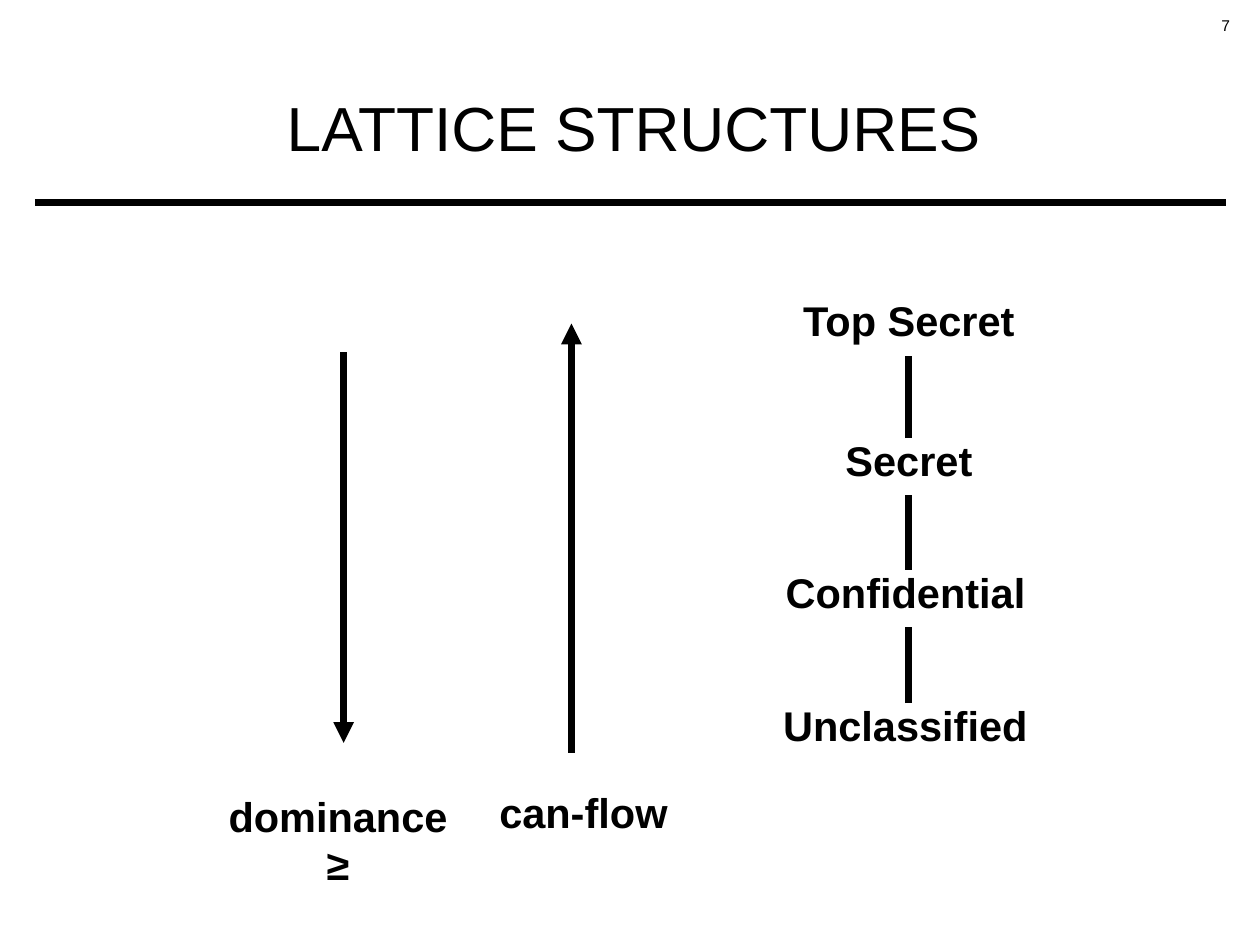
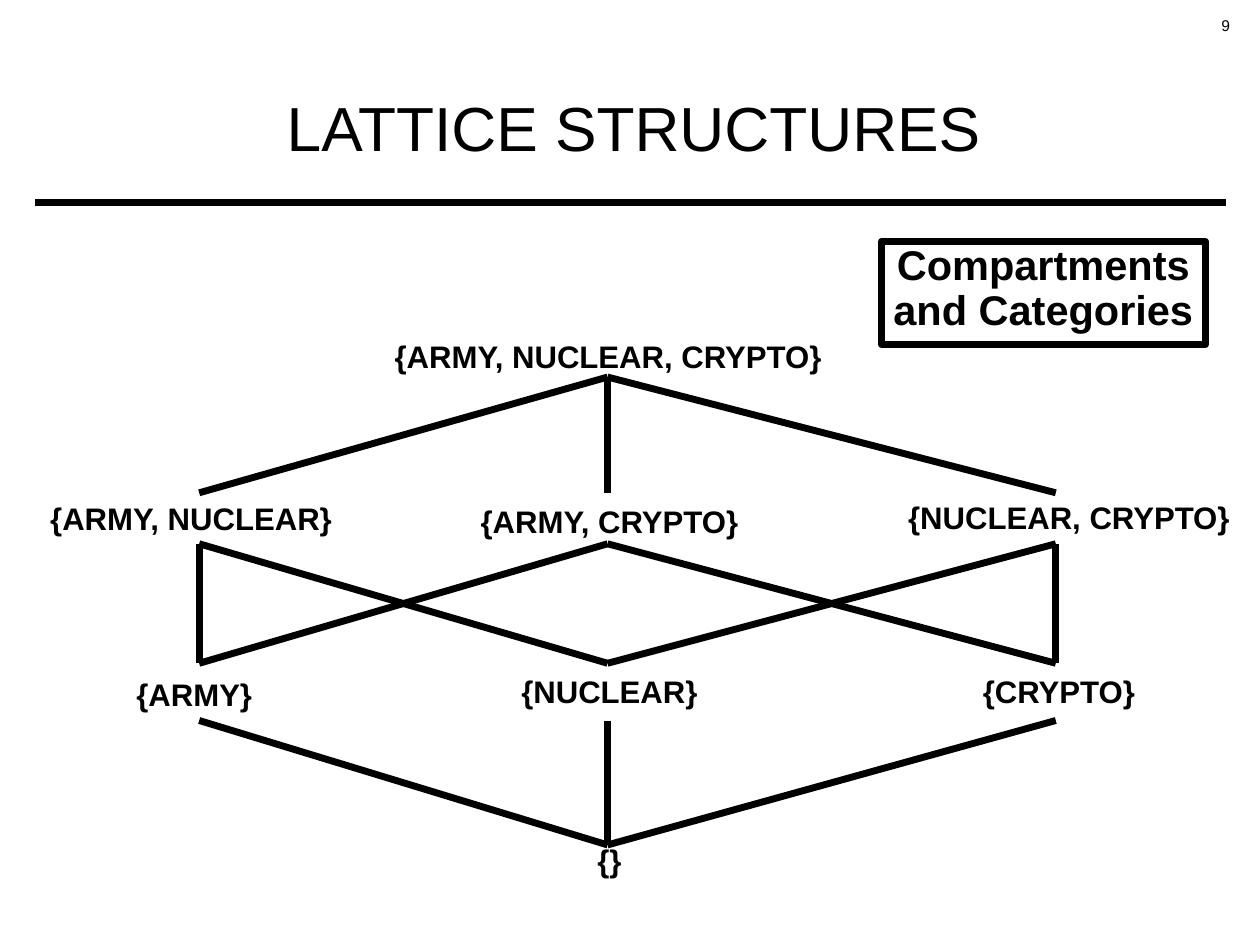
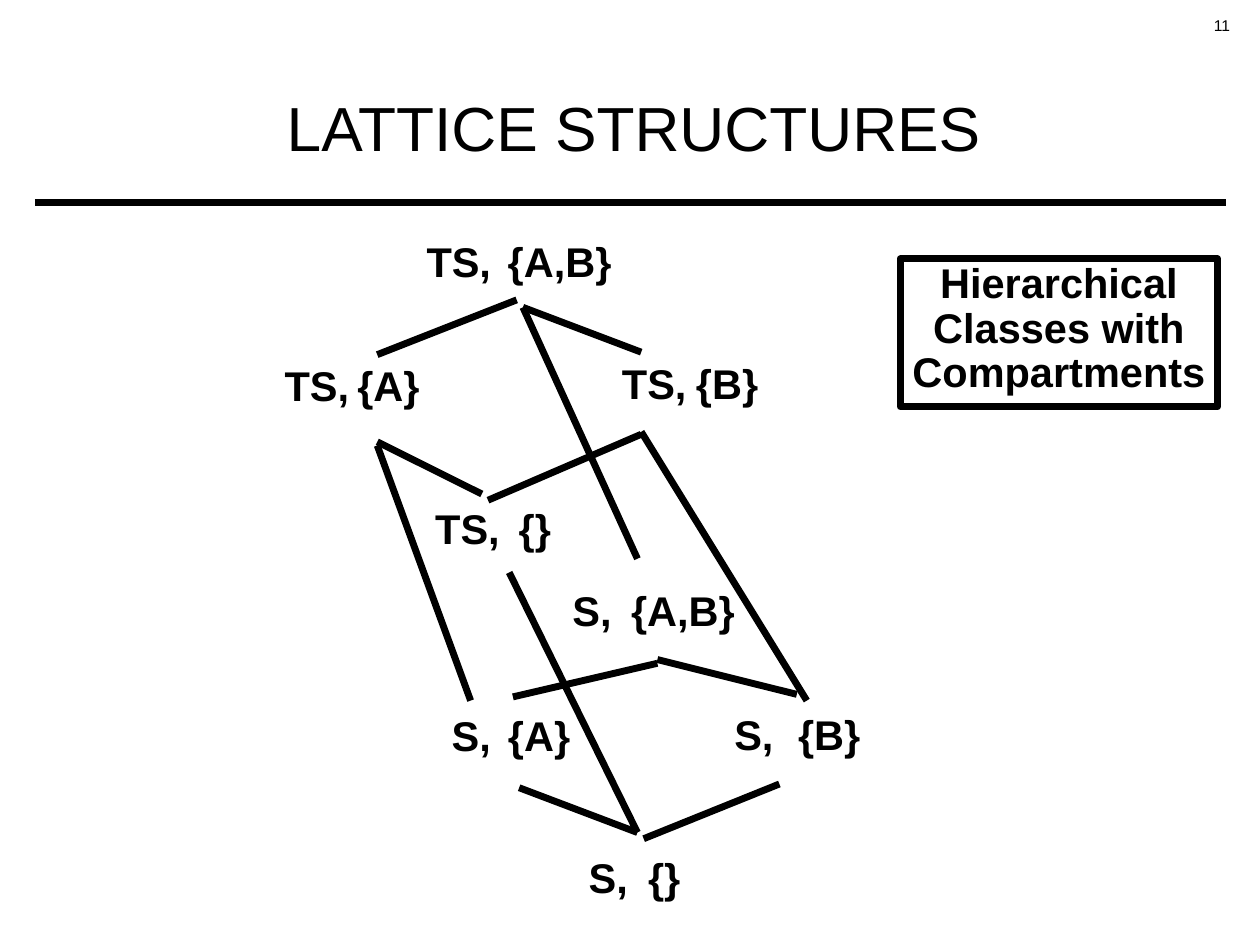
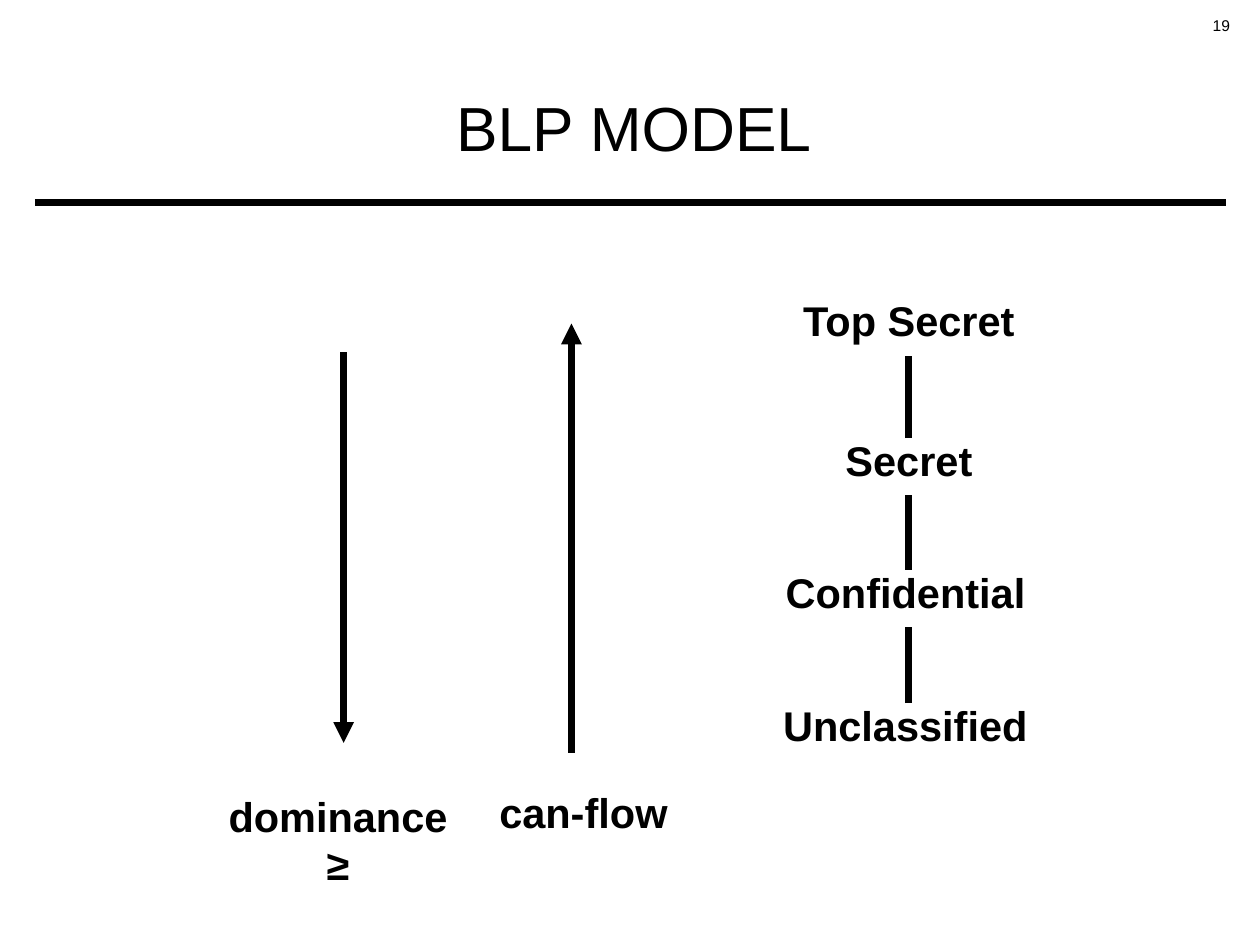
from lxml.etree import SubElement
from pptx import Presentation
from pptx.dml.color import RGBColor
from pptx.enum.shapes import MSO_CONNECTOR, MSO_SHAPE
from pptx.enum.text import MSO_ANCHOR, MSO_AUTO_SIZE, PP_ALIGN
from pptx.oxml.ns import qn
from pptx.util import Inches, Pt

STRAIGHT = MSO_CONNECTOR.STRAIGHT
RECT = MSO_SHAPE.RECTANGLE
TOP, BOTTOM = MSO_ANCHOR.TOP, MSO_ANCHOR.BOTTOM
LEFT, CENTER, RIGHT = PP_ALIGN.LEFT, PP_ALIGN.CENTER, PP_ALIGN.RIGHT
FIXED = MSO_AUTO_SIZE.NONE

COLORS = {"ink": "000000", "paper": "FFFFFF"}
FONT = "Arial"


def color(name):
    return RGBColor.from_string(COLORS[name])


class Deck:
    def __init__(self):
        self.prs = Presentation()
        self.prs.slide_width = Inches(10.12)
        self.prs.slide_height = Inches(7.65)
        self.slide = None

    def page(self, title, number, width):
        """Start a slide with its title, rule and page number."""
        self.slide = self.prs.slides.add_slide(self.prs.slide_layouts[5])
        fill = self.slide.background.fill
        fill.solid()
        fill.fore_color.rgb = color("paper")
        head = self.slide.shapes.title
        head.left, head.top = Inches(5.09 - width / 2), Inches(0.78)
        head.width, head.height = Inches(width), Inches(0.57)
        self.set_text(head, [title], 36, 0.85, bold=False, anchor=BOTTOM)
        self.label(str(number), 8.91, 0.06, 1.04, 0.25, size=9, space=1,
                   align=RIGHT, bold=False, anchor=BOTTOM)
        self.line((0.28, 1.63), (9.85, 1.63))

    def set_text(self, shape, lines, size, space, align=CENTER, bold=True, anchor=TOP):
        frame = shape.text_frame
        frame.word_wrap = False
        frame.auto_size = FIXED
        frame.vertical_anchor = anchor
        frame.margin_left = frame.margin_right = Inches(0.07)
        frame.margin_top = frame.margin_bottom = Inches(0.03)
        for i, text in enumerate(lines):
            para = frame.add_paragraph() if i else frame.paragraphs[0]
            para.alignment = align
            para.line_spacing = space
            run = para.add_run()
            run.text = text
            font = run.font
            font.name, font.size, font.bold = FONT, Pt(size), bold
            font.color.rgb = color("ink")

    def label(self, text, left, top, width, height=0.46, size=24, space=0.87, **style):
        box = self.slide.shapes.add_textbox(
            Inches(left), Inches(top), Inches(width), Inches(height))
        self.set_text(box, text.split("\n"), size, space, **style)
        return box

    def frame(self, text, left, top, width, height):
        box = self.slide.shapes.add_shape(
            RECT, Inches(left), Inches(top), Inches(width), Inches(height))
        box.shadow.inherit = False
        box.fill.background()
        box.line.color.rgb = color("ink")
        box.line.width = Pt(4)
        self.set_text(box, text.split("\n"), 24, 0.9)

    def line(self, start, end, arrow=False):
        link = self.slide.shapes.add_connector(
            STRAIGHT, *(Inches(v) for v in (*start, *end)))
        link.line.color.rgb = color("ink")
        link.line.width = Pt(4)
        props = link.element.spPr
        if arrow:
            SubElement(props.find(qn("a:ln")), qn("a:tailEnd")).set("type", "triangle")
        SubElement(props, qn("a:effectLst"))
        return link


def levels(deck, title, number, width):
    """Draw the chain of secrecy levels beside the two arrows."""
    deck.page(title, number, width)
    mid = 7.3
    chain = [
        ("Top Secret", 2.4, 1.92, CENTER),
        ("Secret", 3.52, 1.22, CENTER),
        ("Confidential", 4.58, 2.12, LEFT),
        ("Unclassified", 5.65, 2.16, LEFT),
    ]
    boxes = [deck.label(text, mid - wide / 2, top, wide, align=align)
             for text, top, wide, align in chain]
    for upper, lower in zip(boxes, boxes[1:]):
        link = deck.line((mid, 0), (mid, 1))
        link.begin_connect(lower, 0)
        link.end_connect(upper, 2)
    deck.line((2.76, 2.83), (2.76, 5.97), arrow=True)
    deck.line((4.59, 6.05), (4.59, 2.6), arrow=True)
    deck.label("dominance\n≥", 1.74, 6.35, 1.95, 0.89, space=0.97)
    deck.label("can-flow", 3.94, 6.35, 1.55, align=LEFT)


def subsets(deck):
    deck.page("LATTICE STRUCTURES", 9, 5.75)
    deck.frame("Compartments\nand Categories", 7.08, 1.94, 2.6, 0.83)
    sets = [
        ("{ARMY, NUCLEAR, CRYPTO}", 3.05, 2.73, 3.67),
        ("{ARMY, NUCLEAR}", 0.29, 4.03, 2.49),
        ("{ARMY, CRYPTO}", 3.74, 4.05, 2.31),
        ("{NUCLEAR, CRYPTO}", 7.19, 4.02, 2.79),
        ("{ARMY}", 1, 5.44, 1.12),
        ("{NUCLEAR}", 4.09, 5.42, 1.61),
        ("{CRYPTO}", 7.79, 5.42, 1.43),
        ("{}", 4.7, 6.78, 0.39),
    ]
    for text, left, top, wide in sets:
        deck.label(text, left, top, wide, 0.37, size=18, space=0.85)
    cols = (1.6, 4.88, 8.48)
    tiers = [
        (3.03, 3.96, [(1, 0), (1, 1), (1, 2)]),
        (4.37, 5.33, [(0, 0), (0, 1), (1, 0), (1, 2), (2, 1), (2, 2)]),
        (5.79, 6.79, [(0, 1), (1, 1), (2, 1)]),
    ]
    for top, low, pairs in tiers:
        for a, b in pairs:
            deck.line((cols[a], top), (cols[b], low))


def classes(deck):
    deck.page("LATTICE STRUCTURES", 11, 5.75)
    deck.frame("Hierarchical\nClasses with\nCompartments", 7.23, 2.08, 2.55, 1.19)
    wide = {"TS,": 0.71, "S,": 0.51, "{A,B}": 1.03, "{A}": 0.7, "{B}": 0.7, "{}": 0.45}
    nodes = [
        ("TS,", 3.33, "{A,B}", 3.98, 1.92),
        ("TS,", 2.19, "{A}", 2.77, 2.92),
        ("TS,", 4.9, "{B}", 5.49, 2.9),
        ("TS,", 3.4, "{}", 4.07, 4.07),
        ("S,", 4.5, "{A,B}", 4.97, 4.73),
        ("S,", 3.53, "{A}", 3.98, 5.73),
        ("S,", 5.8, "{B}", 6.31, 5.72),
        ("S,", 4.63, "{}", 5.11, 6.87),
    ]
    for rank, left, group, right, top in nodes:
        deck.label(rank, left, top, wide[rank])
        deck.label(group, right, top, wide[group])
    edges = [
        ((4.15, 2.41), (3.03, 2.85)),
        ((4.2, 2.47), (5.15, 2.83)),
        ((4.2, 2.47), (5.12, 4.49)),
        ((3.03, 3.55), (3.87, 3.97)),
        ((3.03, 3.58), (3.78, 5.63)),
        ((5.15, 3.49), (3.92, 4.02)),
        ((5.15, 3.47), (6.48, 5.63)),
        ((4.09, 4.6), (5.12, 6.69)),
        ((5.28, 5.33), (4.12, 5.6)),
        ((5.28, 5.3), (6.4, 5.58)),
        ((4.17, 6.33), (5.12, 6.69)),
        ((6.26, 6.3), (5.17, 6.74)),
    ]
    for start, end in edges:
        deck.line(start, end)


def main():
    deck = Deck()
    levels(deck, "LATTICE STRUCTURES", 7, 5.75)
    subsets(deck)
    classes(deck)
    levels(deck, "BLP MODEL", 19, 3)
    deck.prs.save("out.pptx")


if __name__ == "__main__":
    main()
